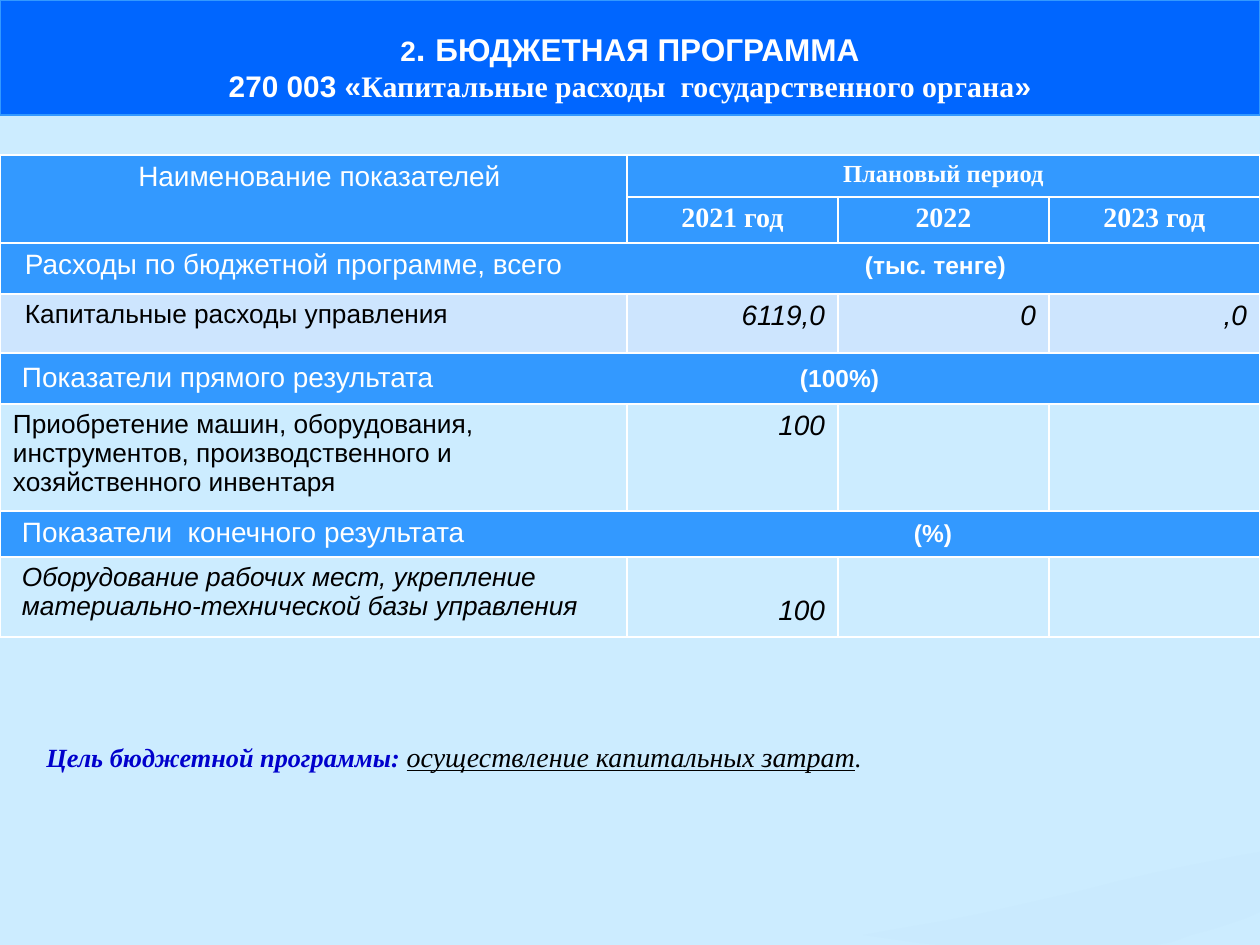
from lxml.etree import SubElement
from pptx import Presentation
from pptx.dml.color import RGBColor
from pptx.enum.text import MSO_ANCHOR as Anchor, MSO_AUTO_SIZE as AutoSize, PP_ALIGN as Align
from pptx.oxml.ns import qn
from pptx.util import Emu, Pt

SCALE = 914400 / 126
SANS, SERIF = "Arial", "Times New Roman"
WHITE = RGBColor(0xFF, 0xFF, 0xFF)
BLACK = RGBColor(0, 0, 0)
PALE = RGBColor(0xCC, 0xEC, 0xFF)
BLUE = RGBColor(0x00, 0x66, 0xFF)
HEADER = RGBColor(0x33, 0x99, 0xFF)
ROW = RGBColor(0xCD, 0xE5, 0xFE)
NAVY = RGBColor(0x00, 0x00, 0xCC)
SWOOSH = RGBColor(0xC6, 0xE7, 0xFC)

COLUMNS = [627, 211, 211, 211]
ROWS = [42, 46, 51, 59, 51, 107, 46, 80]
SWOOSH_POINTS = [
    (1260, 852), (1242, 855), (1191, 865), (1153, 873), (1115, 882), (1080, 891),
    (979, 914), (949, 920), (891, 930), (863, 935), (919, 943), (940, 945),
    (1155, 945), (1172, 942), (1191, 935), (1210, 930), (1226, 925), (1244, 919),
    (1260, 912),
]


def px(length):
    return Emu(round(length * SCALE))


def style(font, size, color, name=SANS, bold=False, italic=False, underline=False):
    font.size, font.name = Pt(size), name
    font.bold, font.italic, font.underline = bold, italic, underline
    font.color.rgb = color


def add_run(paragraph, text, size, color, **options):
    run = paragraph.add_run()
    run.text = text
    style(run.font, size, color, **options)


def place(shape, left, top, width, height):
    shape.left, shape.top = px(left), px(top)
    shape.width, shape.height = px(width), px(height)


def add_title(slide):
    title = slide.shapes.title
    place(title, 0, 0, 1260, 115)
    title.fill.solid()
    title.fill.fore_color.rgb = BLUE
    title.line.color.rgb = HEADER
    title.line.width = Pt(0.75)
    frame = title.text_frame
    frame.auto_size = AutoSize.NONE
    frame.vertical_anchor = Anchor.MIDDLE
    frame.margin_top, frame.margin_bottom = px(21), px(6)
    first, second = frame.paragraphs[0], frame.add_paragraph()
    for paragraph in (first, second):
        paragraph.alignment = Align.CENTER
    for text, size in [("2", 16), (". ", 20), ("БЮДЖЕТНАЯ ПРОГРАММА", 18)]:
        add_run(first, text, size, WHITE, bold=True)
    for text, name in [("270 003 «", SANS),
                       ("Капитальные расходы  государственного органа", SERIF),
                       ("»", SANS)]:
        add_run(second, text, 17, WHITE, name=name, bold=True)


def add_swoosh(slide):
    builder = slide.shapes.build_freeform(*SWOOSH_POINTS[0], scale=SCALE)
    builder.add_line_segments(SWOOSH_POINTS[1:], close=True)
    shape = builder.convert_to_shape()
    shape.shadow.inherit = False
    shape.line.fill.background()
    shape.fill.solid()
    shape.fill.fore_color.rgb = SWOOSH
    color = shape.fill._xPr.find(qn("a:solidFill"))[0]
    SubElement(color, qn("a:alpha"), val="30000")


def add_borders(cell):
    properties = cell._tc.get_or_add_tcPr()
    for side in ("a:lnL", "a:lnR", "a:lnT", "a:lnB"):
        line = SubElement(properties, qn(side), w=str(Pt(1)))
        fill = SubElement(line, qn("a:solidFill"))
        SubElement(fill, qn("a:srgbClr"), val=str(WHITE))


def format_cell(cell, fill):
    add_borders(cell)
    if fill is None:
        cell.fill.background()
    else:
        cell.fill.solid()
        cell.fill.fore_color.rgb = fill
    cell.margin_left = cell.margin_right = px(13)
    cell.margin_top = cell.margin_bottom = px(6)
    cell.text_frame.paragraphs[0].font.size = Pt(14)


def write_cell(cell, text, size, color, left=13, top=6, align=Align.LEFT, **options):
    cell.margin_left, cell.margin_top = px(left), px(top)
    paragraph = cell.text_frame.paragraphs[0]
    paragraph.text = text
    paragraph.alignment = align
    style(paragraph.font, size, color, **options)


def write_section(table, row, text, unit, left, unit_left, top=6):
    cell = table.cell(row, 0)
    cell.merge(table.cell(row, 3))
    cell.margin_left, cell.margin_top = px(left), px(top)
    paragraph = cell.text_frame.paragraphs[0]
    stops = SubElement(paragraph._p.get_or_add_pPr(), qn("a:tabLst"))
    SubElement(stops, qn("a:tab"), pos=str(px(unit_left - left)), algn="l")
    paragraph._p.pPr.insert(0, stops)
    add_run(paragraph, text + "\t", 16, WHITE)
    add_run(paragraph, unit, 14, WHITE, bold=True)


def add_budget_table(slide):
    frame = slide.shapes.add_table(len(ROWS), len(COLUMNS), 0, px(155),
                                   px(sum(COLUMNS)), px(sum(ROWS)))
    table = frame.table
    table.first_row = table.horz_banding = False
    for column, width in zip(table.columns, COLUMNS):
        column.width = px(width)
    fills = [HEADER, HEADER, HEADER, ROW, HEADER, None, HEADER, None]
    for row, height, fill in zip(table.rows, ROWS, fills):
        row.height = px(height)
        for cell in row.cells:
            format_cell(cell, fill)

    table.cell(0, 0).merge(table.cell(1, 0))
    table.cell(0, 1).merge(table.cell(0, 3))
    write_cell(table.cell(0, 0), "Наименование показателей", 16, WHITE,
               left=25, align=Align.CENTER)
    write_cell(table.cell(0, 1), "Плановый период", 14, WHITE,
               align=Align.CENTER, name=SERIF, bold=True)
    for column, year in enumerate(["2021 год", "2022", "2023 год"], 1):
        write_cell(table.cell(1, column), year, 16, WHITE,
                   align=Align.CENTER, name=SERIF, bold=True)

    write_section(table, 2, "Расходы по бюджетной программе, всего", "(тыс. тенге)", 25, 865)
    write_section(table, 4, "Показатели прямого результата", "(100%)", 22, 800, top=9)
    write_section(table, 6, "Показатели  конечного результата", "(%)", 22, 914)

    indicators = [
        (3, "Капитальные расходы управления", 25, False, ["6119,0", "0", ",0"], 6),
        (5, "Приобретение машин, оборудования, инструментов, производственного "
            "и хозяйственного инвентаря", 13, False, ["100"], 6),
        (7, "Оборудование рабочих мест, укрепление материально-технической "
            "базы управления", 22, True, ["100"], 38),
    ]
    for row, name, left, italic, values, top in indicators:
        write_cell(table.cell(row, 0), name, 15, BLACK, left=left, italic=italic)
        for column, value in enumerate(values, 1):
            write_cell(table.cell(row, column), value, 16, BLACK, top=top,
                       align=Align.RIGHT, italic=True)


def add_goal(slide):
    box = slide.shapes.add_textbox(px(34), px(731), px(1181), px(50))
    frame = box.text_frame
    frame.word_wrap = True
    frame.vertical_anchor = Anchor.MIDDLE
    paragraph = frame.paragraphs[0]
    paragraph.alignment = Align.JUSTIFY
    add_run(paragraph, "Цель бюджетной программы: ", 15, NAVY,
            name=SERIF, bold=True, italic=True)
    add_run(paragraph, "осуществление капитальных затрат", 16, BLACK,
            name=SERIF, italic=True, underline=True)
    add_run(paragraph, ".", 15, BLACK, name=SERIF, italic=True)


def main():
    presentation = Presentation()
    presentation.slide_width, presentation.slide_height = px(1260), px(945)
    slide = presentation.slides.add_slide(presentation.slide_layouts[5])
    slide.background.fill.solid()
    slide.background.fill.fore_color.rgb = PALE
    add_title(slide)
    add_swoosh(slide)
    add_budget_table(slide)
    add_goal(slide)
    presentation.save("out.pptx")


if __name__ == "__main__":
    main()
